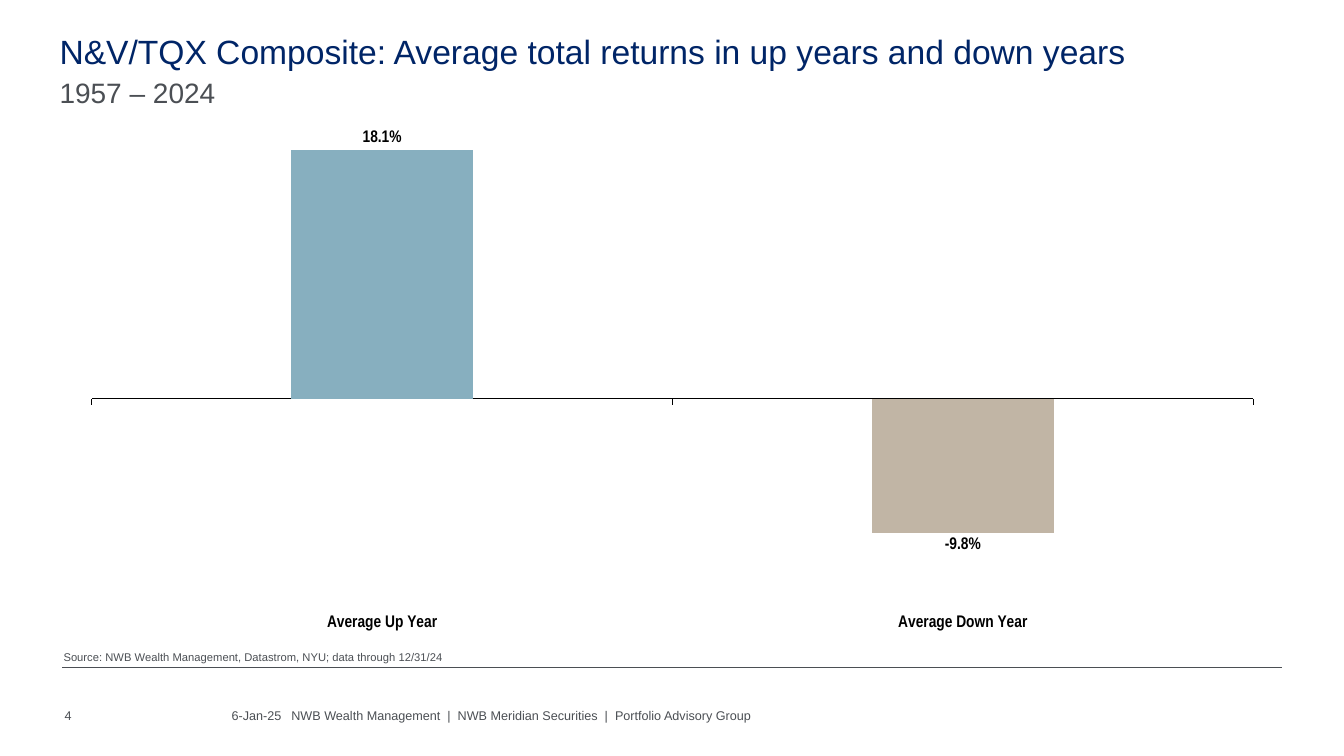
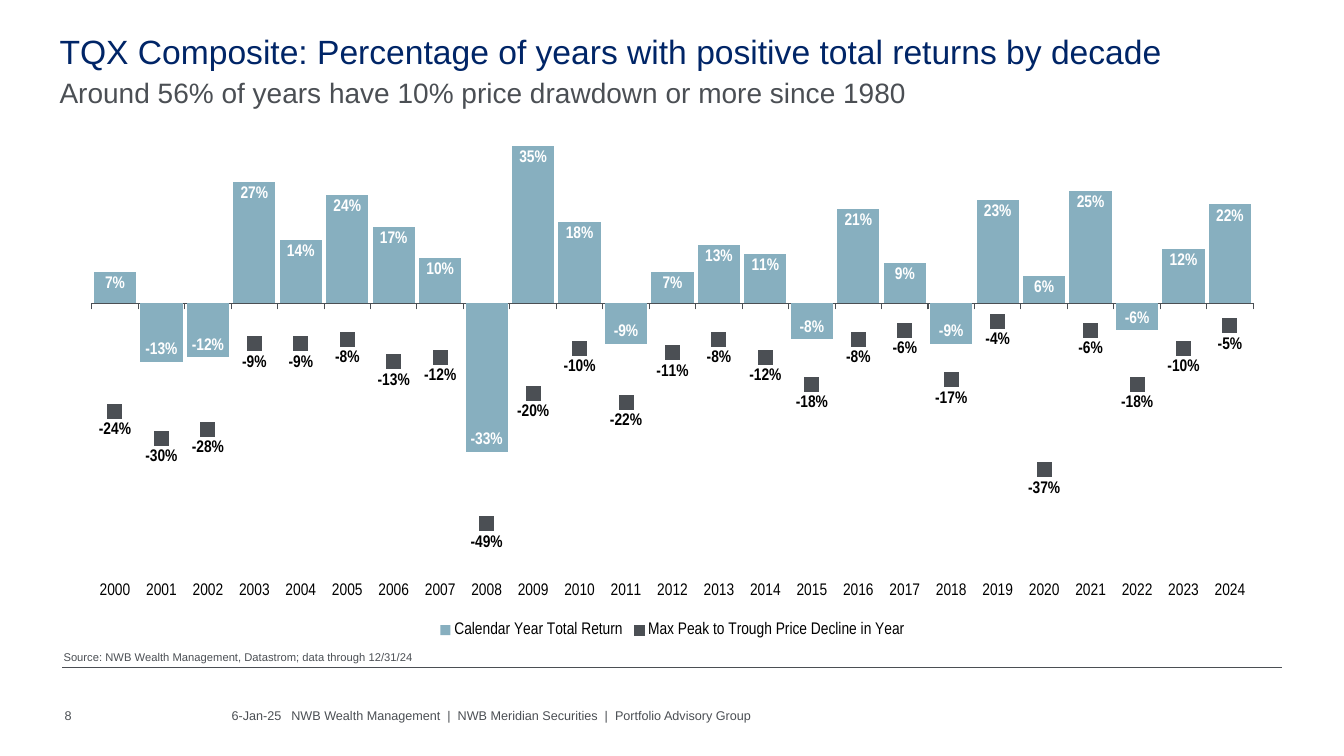
"""Build two slides on index returns with column and combined charts."""
from copy import deepcopy
from dataclasses import dataclass

from pptx import Presentation
from pptx.chart.chart import Chart
from pptx.chart.data import CategoryChartData
from pptx.chart.series import BarSeries, LineSeries
from pptx.dml.color import RGBColor
from pptx.enum.chart import (
    XL_CHART_TYPE, XL_LABEL_POSITION, XL_LEGEND_POSITION, XL_MARKER_STYLE,
    XL_TICK_LABEL_POSITION, XL_TICK_MARK,
)
from pptx.enum.shapes import MSO_CONNECTOR
from pptx.enum.text import MSO_ANCHOR, PP_ALIGN
from pptx.oxml import parse_xml
from pptx.oxml.ns import nsdecls, qn
from pptx.slide import Slide
from pptx.util import Inches, Pt

COLUMNS = XL_CHART_TYPE.COLUMN_CLUSTERED
OUTSIDE_END = XL_LABEL_POSITION.OUTSIDE_END
INSIDE_END = XL_LABEL_POSITION.INSIDE_END
BELOW = XL_LABEL_POSITION.BELOW
LEGEND_BOTTOM = XL_LEGEND_POSITION.BOTTOM
SQUARE = XL_MARKER_STYLE.SQUARE
LABELS_LOW = XL_TICK_LABEL_POSITION.LOW
LABELS_NONE = XL_TICK_LABEL_POSITION.NONE
TICK_OUT = XL_TICK_MARK.OUTSIDE
TICK_NONE = XL_TICK_MARK.NONE
STRAIGHT = MSO_CONNECTOR.STRAIGHT
TOP, BOTTOM = MSO_ANCHOR.TOP, MSO_ANCHOR.BOTTOM
LEFT, RIGHT = PP_ALIGN.LEFT, PP_ALIGN.RIGHT

NAVY = "002567"
GREY = "4B4F54"
BLUE = "87AFBF"
SAND = "C1B5A5"
BLACK = "000000"
WHITE = "FFFFFF"
TEXT_FONT = "Arial"
CHART_FONT = "Arial Narrow"
CHART_SIZE = 12
FOOTER_DATE = "6-Jan-25"
FOOTER_FIRM = "NWB Wealth Management  |  NWB Meridian Securities  |  Portfolio Advisory Group"


@dataclass(frozen=True)
class TextStyle:
    """Place and look of a recurring line of text."""

    left: float
    top: float
    width: float
    height: float
    size: float
    color: str = GREY
    anchor: MSO_ANCHOR = TOP
    align: PP_ALIGN = LEFT


TITLE = TextStyle(0.59, 0.31, 12.11, 0.4, 24, NAVY)
SUBTITLE = TextStyle(0.59, 0.75, 12.11, 0.41, 20)
SOURCE = TextStyle(0.63, 6.33, 8.52, 0.25, 8, anchor=BOTTOM)
PAGE = TextStyle(0.64, 6.95, 0.48, 0.22, 9, anchor=BOTTOM)
DATE = TextStyle(1.22, 6.95, 1.57, 0.22, 9, anchor=BOTTOM, align=RIGHT)
FIRM = TextStyle(2.89, 6.95, 6.04, 0.22, 9, anchor=BOTTOM)


@dataclass(frozen=True)
class Page:
    """Wording of one slide's title and footer."""

    title: str
    subtitle: str
    source: str
    number: int


@dataclass(frozen=True)
class ChartStyle:
    """Scale, spacing and plot height of a chart."""

    low: float
    high: float
    gap: int
    overlap: int
    plot_height: float
    axis_color: str
    bold: bool


AVERAGES_PAGE = Page(
    "N&V/TQX Composite: Average total returns in up years and down years",
    "1957 – 2024",
    "Source: NWB Wealth Management, Datastrom, NYU; data through 12/31/24",
    4,
)
DECLINES_PAGE = Page(
    "TQX Composite: Percentage of years with positive total returns by decade",
    "Around 56% of years have 10% price drawdown or more since 1980",
    "Source: NWB Wealth Management, Datastrom; data through 12/31/24",
    8,
)
AVERAGES_STYLE = ChartStyle(-0.15, 0.2, 219, -27, 0.91, BLACK, True)
DECLINES_STYLE = ChartStyle(-0.6, 0.4, 10, 0, 0.85, GREY, False)

AVERAGES = {"Average Up Year": 0.181, "Average Down Year": -0.098}
YEARS = [str(year) for year in range(2000, 2025)]
RETURNS = [
    0.07, -0.13, -0.12, 0.27, 0.14, 0.24, 0.17, 0.1, -0.33, 0.35, 0.18, -0.09, 0.07,
    0.13, 0.11, -0.08, 0.21, 0.09, -0.09, 0.23, 0.06, 0.25, -0.06, 0.12, 0.22,
]
DECLINES = [
    -0.24, -0.3, -0.28, -0.09, -0.09, -0.08, -0.13, -0.12, -0.49, -0.2, -0.1, -0.22, -0.11,
    -0.08, -0.12, -0.18, -0.08, -0.06, -0.17, -0.04, -0.37, -0.06, -0.18, -0.1, -0.05,
]


def rgb(color: str) -> RGBColor:
    """Turn a hex string into a colour."""
    return RGBColor.from_string(color)


def add_text(slide: Slide, text: str, style: TextStyle) -> None:
    """Add one line of text in a recurring style."""
    box = slide.shapes.add_textbox(
        Inches(style.left), Inches(style.top), Inches(style.width), Inches(style.height)
    )
    frame = box.text_frame
    frame.word_wrap = True
    frame.vertical_anchor = style.anchor
    frame.margin_left = frame.margin_right = frame.margin_top = frame.margin_bottom = 0
    paragraph = frame.paragraphs[0]
    paragraph.alignment = style.align
    run = paragraph.add_run()
    run.text = text
    run.font.name = TEXT_FONT
    run.font.size = Pt(style.size)
    run.font.color.rgb = rgb(style.color)


def add_page(deck: Presentation, page: Page) -> Slide:
    """Add a slide with its title, source, rule and footer."""
    slide = deck.slides.add_slide(deck.slide_layouts[6])
    rule = slide.shapes.add_connector(
        STRAIGHT, Inches(0.62), Inches(6.62), Inches(12.72), Inches(6.62)
    )
    rule.line.color.rgb = rgb(GREY)
    rule.line.width = Pt(0.5)
    rule.element.spPr.append(parse_xml(f"<a:effectLst {nsdecls('a')}/>"))
    for text, style in (
        (page.title, TITLE),
        (page.subtitle, SUBTITLE),
        (page.source, SOURCE),
        (str(page.number), PAGE),
        (FOOTER_DATE, DATE),
        (FOOTER_FIRM, FIRM),
    ):
        add_text(slide, text, style)
    return slide


def set_plot_area(chart: Chart, height: float) -> None:
    """Fix the inner plot area as fractions of the chart."""
    area = chart.element.find(qn("c:chart")).find(qn("c:plotArea"))
    for layout in area.findall(qn("c:layout")):
        area.remove(layout)
    area.insert(0, parse_xml(
        f'<c:layout {nsdecls("c")}><c:manualLayout><c:layoutTarget val="inner"/>'
        '<c:xMode val="edge"/><c:yMode val="edge"/><c:x val="0.02"/><c:y val="0.02"/>'
        f'<c:w val="0.96"/><c:h val="{height}"/></c:manualLayout></c:layout>'
    ))


def add_columns(slide: Slide, data: CategoryChartData, style: ChartStyle) -> Chart:
    """Add a column chart with the shared axes and font."""
    chart = slide.shapes.add_chart(
        COLUMNS, Inches(0.67), Inches(1.12), Inches(12), Inches(5.25), data
    ).chart
    chart.has_title = False
    chart.has_legend = False
    chart.font.name = CHART_FONT
    chart.font.size = Pt(CHART_SIZE)
    chart.font.bold = style.bold
    chart.font.color.rgb = rgb(BLACK)
    columns = chart.plots[0]
    columns.gap_width = style.gap
    columns.overlap = style.overlap
    columns.vary_by_categories = False
    categories = chart.category_axis
    categories.tick_label_position = LABELS_LOW
    categories.major_tick_mark = TICK_OUT
    categories.minor_tick_mark = TICK_NONE
    categories.format.line.color.rgb = rgb(style.axis_color)
    categories.format.line.width = Pt(0.75)
    values = chart.value_axis
    values.minimum_scale = style.low
    values.maximum_scale = style.high
    values.has_major_gridlines = False
    values.tick_label_position = LABELS_NONE
    values.major_tick_mark = values.minor_tick_mark = TICK_NONE
    values.format.line.fill.background()
    set_plot_area(chart, style.plot_height)
    return chart


def label_values(
    series: BarSeries | LineSeries, position: XL_LABEL_POSITION, pattern: str, color: str
) -> None:
    """Show bold value labels on a series."""
    labels = series.data_labels
    labels.show_value = True
    labels.number_format = pattern
    labels.number_format_is_linked = False
    labels.position = position
    labels.font.name = CHART_FONT
    labels.font.size = Pt(CHART_SIZE)
    labels.font.bold = True
    labels.font.color.rgb = rgb(color)


def fill_bars(bars: BarSeries) -> None:
    """Give bars the main fill above and below zero."""
    bars.invert_if_negative = False
    bars.format.fill.solid()
    bars.format.fill.fore_color.rgb = rgb(BLUE)


def move_to_markers(chart: Chart) -> LineSeries:
    """Turn the second column series into markers on the same axes."""
    area = chart.element.find(qn("c:chart")).find(qn("c:plotArea"))
    columns = area.find(qn("c:barChart"))
    moved = columns.findall(qn("c:ser"))[1]
    for bar_setting in moved.findall(qn("c:invertIfNegative")):
        moved.remove(bar_setting)
    lines = parse_xml(
        f'<c:lineChart {nsdecls("c")}><c:grouping val="standard"/>'
        '<c:varyColors val="0"/><c:marker val="1"/></c:lineChart>'
    )
    lines.insert(2, moved)
    for axis in columns.findall(qn("c:axId")):
        lines.append(deepcopy(axis))
    columns.addnext(lines)
    markers = chart.plots[1].series[0]
    markers.smooth = False
    markers.format.line.fill.background()
    markers.marker.style = SQUARE
    markers.marker.size = 10
    markers.marker.format.fill.solid()
    markers.marker.format.fill.fore_color.rgb = rgb(GREY)
    markers.marker.format.line.color.rgb = rgb(GREY)
    return markers


def add_averages(deck: Presentation) -> None:
    """Add the slide comparing average up and down years."""
    slide = add_page(deck, AVERAGES_PAGE)
    data = CategoryChartData(number_format="0.0%")
    data.categories = list(AVERAGES)
    data.add_series("Series 1", list(AVERAGES.values()))
    averages = add_columns(slide, data, AVERAGES_STYLE).plots[0].series[0]
    fill_bars(averages)
    down_year = averages.points[1].format.fill
    down_year.solid()
    down_year.fore_color.rgb = rgb(SAND)
    label_values(averages, OUTSIDE_END, "0.0%", BLACK)


def add_declines(deck: Presentation) -> None:
    """Add the slide of yearly returns and price declines."""
    slide = add_page(deck, DECLINES_PAGE)
    data = CategoryChartData(number_format="0%")
    data.categories = YEARS
    data.add_series("Calendar Year Total Return", RETURNS)
    data.add_series("Max Peak to Trough Price Decline in Year", DECLINES)
    chart = add_columns(slide, data, DECLINES_STYLE)
    declines = move_to_markers(chart)
    returns = chart.plots[0].series[0]
    fill_bars(returns)
    label_values(returns, INSIDE_END, "0%", WHITE)
    label_values(declines, BELOW, "0%", BLACK)
    chart.has_legend = True
    chart.legend.position = LEGEND_BOTTOM
    chart.legend.include_in_layout = False


def main() -> None:
    """Build and save the presentation."""
    deck = Presentation()
    deck.slide_width = Inches(13.33)
    deck.slide_height = Inches(7.5)
    add_averages(deck)
    add_declines(deck)
    deck.save("out.pptx")


if __name__ == "__main__":
    main()
